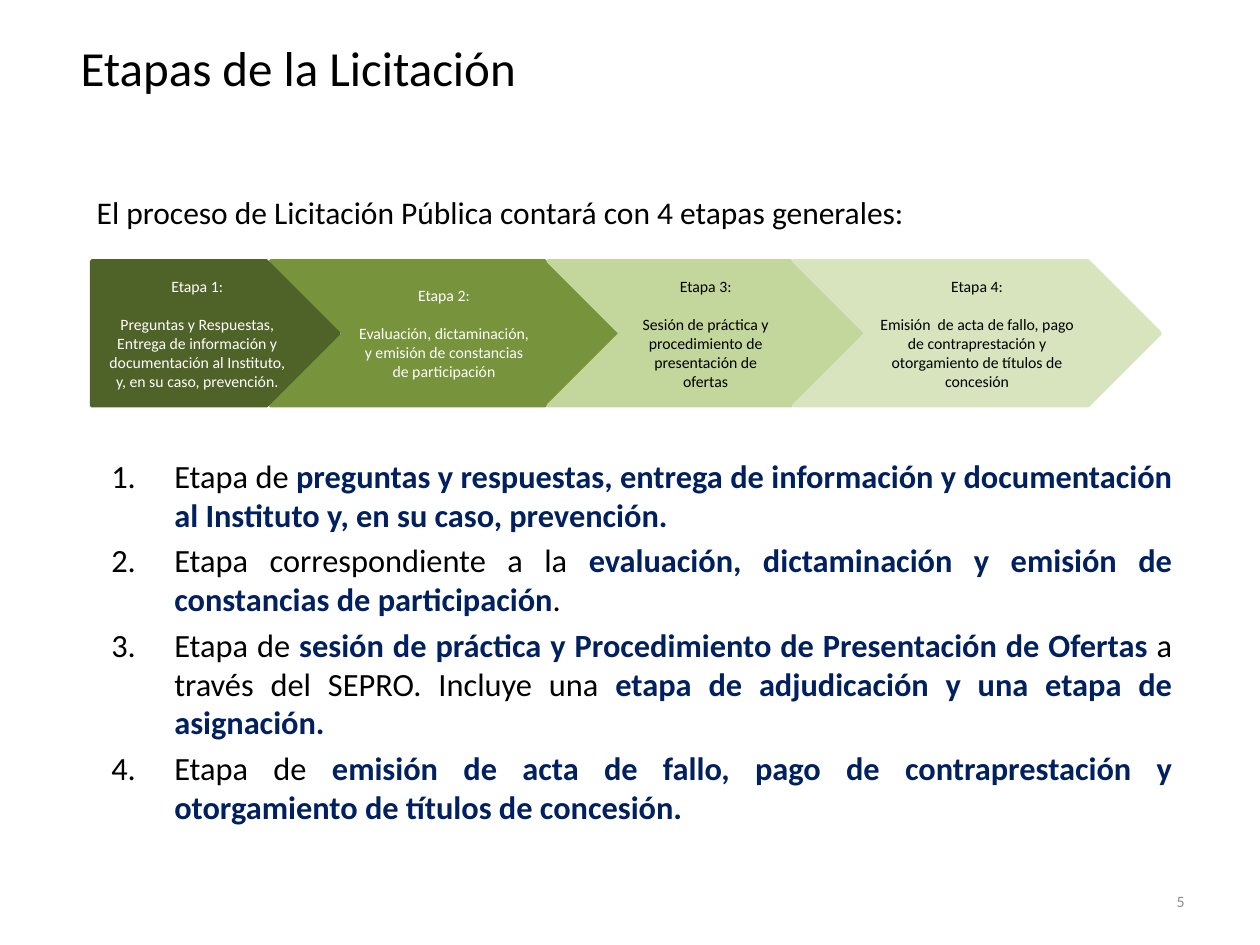
from dataclasses import dataclass

from lxml.etree import SubElement
from pptx import Presentation
from pptx.dml.color import RGBColor
from pptx.enum.shapes import MSO_SHAPE as Preset
from pptx.enum.text import MSO_ANCHOR as Anchor, MSO_AUTO_SIZE as AutoSize, PP_ALIGN as Align
from pptx.oxml.ns import qn
from pptx.util import Cm, Pt


@dataclass(frozen=True)
class Theme:
    font: str = "Calibri"
    black: str = "000000"
    white: str = "FFFFFF"
    gray: str = "8C8C8C"
    navy: str = "002060"
    stage_fills: tuple = ("4F6228", "77933C", "C3D69B", "D7E4BD")
    title_size: float = 28
    intro_size: float = 18
    list_size: float = 18.5
    small_size: float = 9


THEME = Theme()
STAGE_TOP, STAGE_HEIGHT = 5.26, 2.92

# Number, left and width in cm, text colour, description; back to front
STAGES = [
    (2, 5.46, 6.98, THEME.white,
     "Evaluación, dictaminación, y emisión de constancias de participación"),
    (1, 1.85, 4.98, THEME.white,
     "Preguntas y Respuestas, Entrega de información y documentación al Instituto, "
     "y, en su caso, prevención."),
    (3, 11.05, 6.35, THEME.black,
     "Sesión de práctica y procedimiento de presentación de ofertas"),
    (4, 16, 7.39, THEME.black,
     "Emisión  de acta de fallo, pago de contraprestación y otorgamiento de títulos "
     "de concesión"),
]

# Each item alternates plain and emphasized text
ITEMS = [
    ("Etapa de ",
     "preguntas y respuestas, entrega de información y documentación al Instituto y, "
     "en su caso, prevención."),
    ("Etapa correspondiente a la ",
     "evaluación, dictaminación y emisión de constancias de participación", "."),
    ("Etapa de ", "sesión de práctica y Procedimiento de Presentación de Ofertas ",
     "a través del SEPRO. Incluye una ", "etapa de adjudicación y una etapa de asignación."),
    ("Etapa de ",
     "emisión de acta de fallo, pago de contraprestación y otorgamiento de títulos "
     "de concesión."),
]


def set_attributes(target, **values):
    for name, value in values.items():
        setattr(target, name, value)


def place(shape, left, top, width, height):
    set_attributes(shape, left=Cm(left), top=Cm(top), width=Cm(width), height=Cm(height))


def add_run(paragraph, text, size, color, bold=False):
    run = paragraph.add_run()
    run.text = text
    set_attributes(run.font, name=THEME.font, size=Pt(size), bold=bold)
    run.font.color.rgb = RGBColor.from_string(color)


def fill_line(shape, text, size, color, align, anchor=Anchor.TOP):
    """Put one formatted paragraph in a shape."""
    frame = shape.text_frame
    set_attributes(frame, word_wrap=True, auto_size=AutoSize.NONE, vertical_anchor=anchor)
    frame.paragraphs[0].alignment = align
    add_run(frame.paragraphs[0], text, size, color)


def add_text(slide, box, *line):
    fill_line(slide.shapes.add_textbox(*map(Cm, box)), *line)


def add_stage(slide, number, left, width, text_color, description):
    preset = Preset.PENTAGON if number == 1 else Preset.CHEVRON
    shape = slide.shapes.add_shape(
        preset, Cm(left), Cm(STAGE_TOP), Cm(width), Cm(STAGE_HEIGHT))
    shape.shadow.inherit = False
    color = RGBColor.from_string(THEME.stage_fills[number - 1])
    shape.fill.solid()
    shape.fill.fore_color.rgb = color
    shape.line.color.rgb = color
    shape.line.width = Pt(2)
    fill_line(shape, f"Etapa {number}:", THEME.small_size, text_color,
              Align.CENTER, Anchor.MIDDLE)
    shape.text_frame.paragraphs[0].space_after = Pt(11)
    paragraph = shape.text_frame.add_paragraph()
    paragraph.alignment = Align.CENTER
    add_run(paragraph, description, THEME.small_size, text_color)


def number_paragraph(paragraph):
    """Give a paragraph automatic numbering with a hanging indent."""
    properties = paragraph._p.get_or_add_pPr()
    properties.set("marL", str(Cm(2.24)))
    properties.set("indent", str(Cm(-1.27)))
    SubElement(properties, qn("a:buFont"), typeface="+mj-lt")
    SubElement(properties, qn("a:buAutoNum"), type="arabicPeriod")


def fill_numbered_list(placeholder, items):
    frame = placeholder.text_frame
    set_attributes(frame, word_wrap=True, auto_size=AutoSize.NONE)
    for index, parts in enumerate(items):
        paragraph = frame.add_paragraph() if index else frame.paragraphs[0]
        number_paragraph(paragraph)
        set_attributes(paragraph, alignment=Align.JUSTIFY,
                       space_before=Pt(3.7 if index else 0))
        for position, text in enumerate(parts):
            emphasized = position % 2 == 1
            add_run(paragraph, text, THEME.list_size,
                    THEME.navy if emphasized else THEME.black, emphasized)


def main():
    presentation = Presentation()
    set_attributes(presentation, slide_width=Cm(25.4), slide_height=Cm(19.05))
    slide = presentation.slides.add_slide(presentation.slide_layouts[1])
    title, body = slide.placeholders

    place(title, 0.97, 0.05, 10.08, 2.59)
    fill_line(title, "Etapas de la Licitación", THEME.title_size, THEME.black,
              Align.CENTER, Anchor.MIDDLE)
    add_text(slide, (1.7, 3.76, 17.7, 1.02),
             "El proceso de Licitación Pública contará con 4 etapas generales:",
             THEME.intro_size, THEME.black, Align.JUSTIFY)
    for stage in STAGES:
        add_stage(slide, *stage)
    place(body, 1.02, 9.07, 22.86, 7.14)
    fill_numbered_list(body, ITEMS)
    add_text(slide, (18.21, 17.65, 5.92, 1.02), "5", THEME.small_size, THEME.gray,
             Align.RIGHT, Anchor.MIDDLE)

    presentation.save("out.pptx")


if __name__ == "__main__":
    main()
